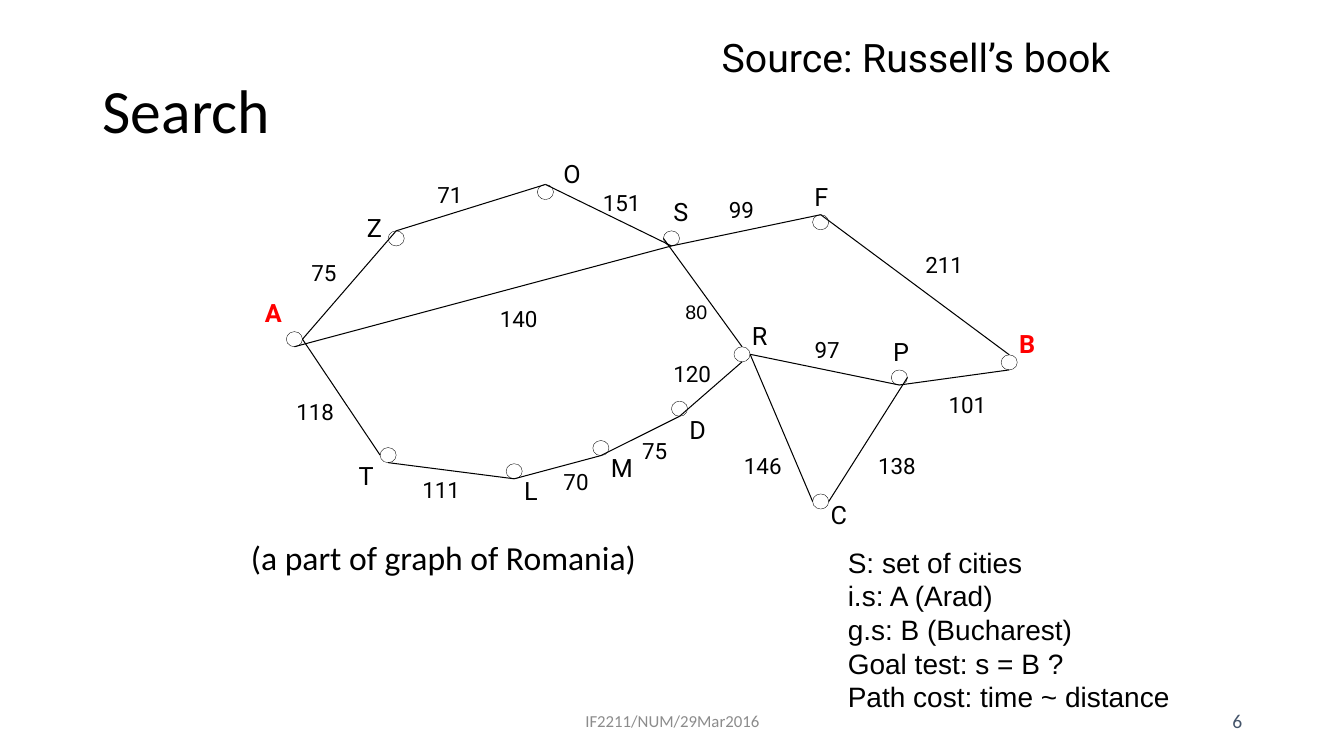
from pptx import Presentation
from pptx.dml.color import RGBColor
from pptx.enum.shapes import MSO_CONNECTOR, MSO_SHAPE
from pptx.enum.text import MSO_ANCHOR, PP_ALIGN
from pptx.oxml.ns import qn
from pptx.util import Inches, Pt

BLACK = RGBColor(0x00, 0x00, 0x00)
RED = RGBColor(0xFF, 0x00, 0x00)
GREY = RGBColor(0x8C, 0x8C, 0x8C)
SLATE = RGBColor(0x44, 0x54, 0x6A)

LEFT, CENTER, RIGHT = PP_ALIGN.LEFT, PP_ALIGN.CENTER, PP_ALIGN.RIGHT
TOP, MIDDLE = MSO_ANCHOR.TOP, MSO_ANCHOR.MIDDLE
STRAIGHT = MSO_CONNECTOR.STRAIGHT
OVAL = MSO_SHAPE.OVAL

NODE_WIDTH, NODE_HEIGHT = 0.16, 0.15
ENDPOINTS = ("A", "B")

# City: (node left, node top, label left, label top)
CITIES = {
    "A": (2.84, 3.29, 2.53, 2.90),
    "T": (3.77, 4.44, 3.46, 4.52),
    "R": (7.28, 3.44, 7.36, 3.13),
    "C": (8.06, 4.90, 8.14, 4.90),
    "P": (8.84, 3.67, 8.76, 3.29),
    "B": (9.93, 3.52, 10.01, 3.21),
    "F": (8.06, 2.13, 7.98, 1.75),
    "S": (6.58, 2.29, 6.58, 1.90),
    "O": (5.33, 1.83, 5.49, 1.52),
    "Z": (3.85, 2.29, 3.54, 2.06),
    "D": (6.66, 3.98, 6.74, 4.06),
    "M": (5.88, 4.37, 5.96, 4.44),
    "L": (5.02, 4.60, 5.10, 4.67),
}

# Fractions of the node's width and height
SIDES = {"top": (0.5, 0), "left": (0, 0.5), "bottom": (0.5, 1), "right": (1, 0.5)}

# (city, side, city, side, distance, label left, label top)
ROADS = [
    ("A", "right", "Z", "top", "75", 2.99, 2.52),
    ("Z", "top", "O", "top", "71", 4.24, 1.75),
    ("O", "top", "S", "bottom", "151", 5.88, 1.83),
    ("A", "bottom", "S", "bottom", "140", 4.86, 2.98),
    ("P", "bottom", "B", "bottom", "101", 9.31, 3.83),
    ("R", "right", "P", "bottom", "97", 7.98, 3.29),
    ("C", "right", "P", "right", "138", 8.61, 4.44),
    ("C", "left", "R", "right", "146", 7.28, 4.44),
    ("D", "bottom", "R", "bottom", "120", 6.58, 3.52),
    ("M", "bottom", "D", "bottom", "75", 6.27, 4.29),
    ("L", "bottom", "M", "bottom", "70", 5.49, 4.60),
    ("T", "left", "A", "right", "118", 2.84, 3.90),
    ("T", "bottom", "L", "bottom", "111", 4.09, 4.67),
    ("R", "top", "S", "left", "80", 6.70, 2.93),
    ("S", "bottom", "F", "top", "99", 7.13, 1.90),
    ("F", "top", "B", "top", "211", 9.08, 2.44),
]

PROBLEM = [
    "S: set of cities",
    "i.s: A (Arad)",
    "g.s: B (Bucharest)",
    "Goal test: s = B ?",
    "Path cost: time ~ distance",
]


def add_text(slide, lines, box, size, font="Roboto", color=BLACK, bold=False,
             align=LEFT, anchor=TOP, wrap=True, line_spacing=None):
    text_box = slide.shapes.add_textbox(*map(Inches, box))
    text_frame = text_box.text_frame
    text_frame.text = "\n".join(lines)
    text_frame.word_wrap = wrap
    text_frame.vertical_anchor = anchor
    for paragraph in text_frame.paragraphs:
        paragraph.alignment = align
        paragraph.line_spacing = line_spacing
        for run in paragraph.runs:
            run.font.name = font
            run.font.size = Pt(size)
            run.font.bold = bold
            run.font.color.rgb = color


def add_node(slide, left, top):
    node = slide.shapes.add_shape(
        OVAL, Inches(left), Inches(top), Inches(NODE_WIDTH), Inches(NODE_HEIGHT))
    node.shadow.inherit = False
    node.fill.background()
    node.line.color.rgb = BLACK
    node.line.width = Pt(0.25)


def node_point(city, side):
    """Return the middle of one side of a city's node."""
    left, top = CITIES[city][:2]
    across, down = SIDES[side]
    return Inches(left + across * NODE_WIDTH), Inches(top + down * NODE_HEIGHT)


def add_road(slide, start, end):
    road = slide.shapes.add_connector(STRAIGHT, *start, *end)
    road.line.color.rgb = BLACK
    road.line.width = Pt(0.75)
    properties = road._element.spPr
    properties.append(properties.makeelement(qn("a:effectLst"), {}))


def add_graph(slide):
    for left, top, _, _ in CITIES.values():
        add_node(slide, left, top)
    for start, start_side, end, end_side, distance, left, top in ROADS:
        add_road(slide, node_point(start, start_side), node_point(end, end_side))
        if distance == "80":
            add_text(slide, [distance], (left, top, 0.42, 0.33), 14, "Arial", wrap=False)
        else:
            add_text(slide, [distance], (left, top, 0.62, 0.37), 16)
    for city, (_, _, left, top) in CITIES.items():
        is_endpoint = city in ENDPOINTS
        add_text(slide, [city], (left, top, 0.47, 0.4), 18,
                 color=RED if is_endpoint else BLACK, bold=is_endpoint)


def main():
    presentation = Presentation()
    presentation.slide_width = Inches(13.33)
    presentation.slide_height = Inches(7.5)
    slide = presentation.slides.add_slide(presentation.slide_layouts[6])

    add_text(slide, ["Search"], (0.92, 0.4, 11.5, 1.45), 44, "Calibri",
             anchor=MIDDLE, line_spacing=0.9)
    add_text(slide, ["Source: Russell’s book"], (7.06, 0.28, 4.07, 0.57), 28)
    add_graph(slide)
    add_text(slide, ["(a part of graph of Romania)"], (2.39, 5.28, 4.05, 0.5), 24,
             "Calibri", wrap=False)
    add_text(slide, PROBLEM, (8.31, 5.36, 3.88, 1.78), 20, "Arial")
    add_text(slide, ["IF2211/NUM/29Mar2016"], (4.42, 6.95, 4.5, 0.4), 12, "Calibri",
             GREY, align=CENTER, anchor=MIDDLE)
    add_text(slide, ["6"], (9.42, 6.95, 3, 0.4), 14, "Calibri", SLATE,
             align=RIGHT, anchor=MIDDLE)

    presentation.save("out.pptx")


if __name__ == "__main__":
    main()
